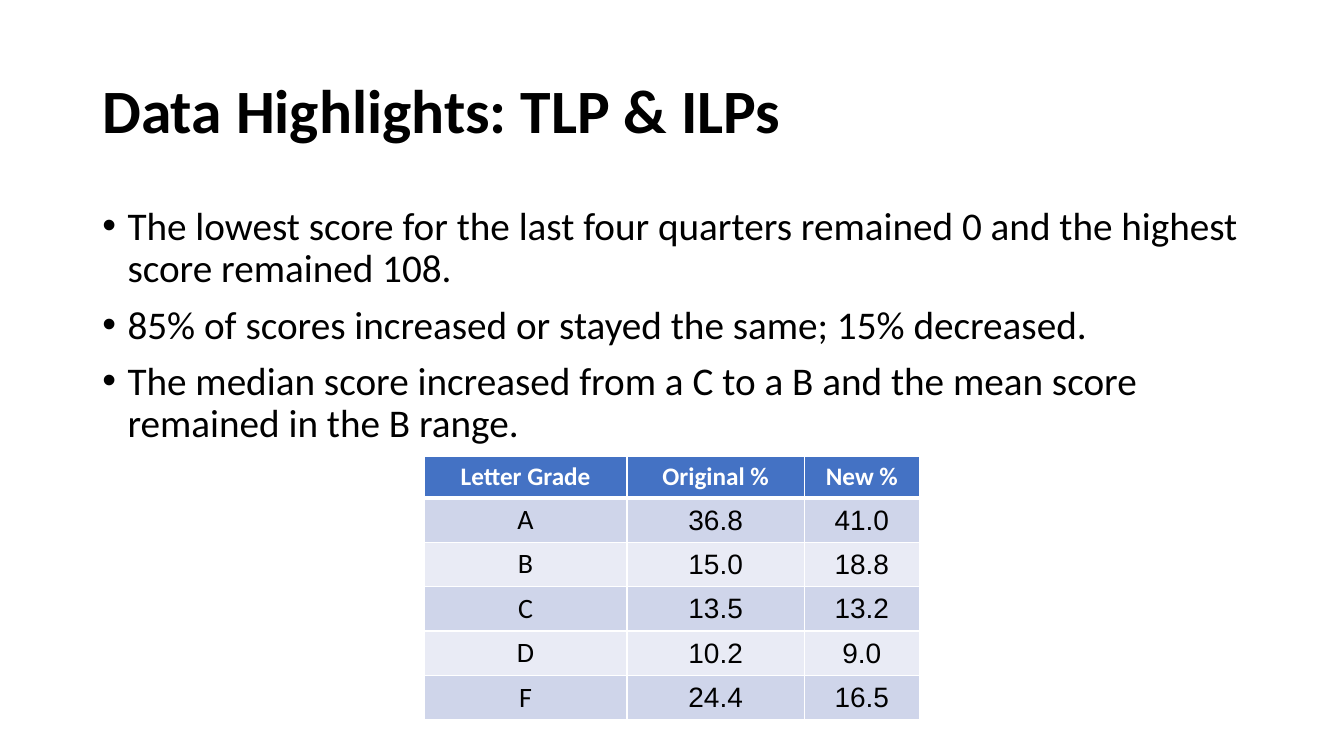
import dataclasses

import lxml.etree
import pptx
import pptx.dml.color
import pptx.enum.text
import pptx.oxml.ns
import pptx.util

Cm = pptx.util.Cm
ALIGN = pptx.enum.text.PP_ALIGN
ANCHOR = pptx.enum.text.MSO_ANCHOR


@dataclasses.dataclass(frozen=True)
class Theme:
    text_font: str = "Calibri"
    number_font: str = "Arial"
    title_size: int = 44
    body_size: int = 28
    header_size: int = 18
    cell_size: int = 20
    black: str = "000000"
    white: str = "FFFFFF"
    header_fill: str = "4472C4"
    band_fills: tuple = ("CFD5EA", "E9EBF5")


def rgb(color):
    return pptx.dml.color.RGBColor.from_string(color)


def add_element(parent, tag, **attributes):
    return lxml.etree.SubElement(parent, pptx.oxml.ns.qn(tag), attributes)


def write_text(paragraph, text, *, font, size, color, bold=False, align=ALIGN.LEFT,
               line_spacing=1.0, space_before=0, bullet=None):
    paragraph.alignment = align
    paragraph.line_spacing = line_spacing
    paragraph.space_before = pptx.util.Pt(space_before)
    if bullet:
        properties = paragraph._p.get_or_add_pPr()
        indent = Cm(0.635)
        properties.set("marL", str(indent))
        properties.set("indent", str(-indent))
        add_element(properties, "a:buFont", typeface="Arial")
        add_element(properties, "a:buChar", char=bullet)
    run = paragraph.add_run()
    run.text = text
    run.font.name = font
    run.font.size = pptx.util.Pt(size)
    run.font.bold = bold
    run.font.color.rgb = rgb(color)


class SlideBuilder:
    def __init__(self, presentation, theme):
        self.theme = theme
        self.slide = presentation.slides.add_slide(presentation.slide_layouts[6])

    def text_box(self, left, top, width, height, anchor):
        shape = self.slide.shapes.add_textbox(Cm(left), Cm(top), Cm(width), Cm(height))
        shape.text_frame.word_wrap = True
        shape.text_frame.vertical_anchor = anchor
        return shape.text_frame

    def title(self, text, *box):
        frame = self.text_box(*box, anchor=ANCHOR.MIDDLE)
        write_text(frame.paragraphs[0], text, font=self.theme.text_font,
                   size=self.theme.title_size, color=self.theme.black,
                   bold=True, line_spacing=0.9)

    def bullets(self, texts, *box):
        frame = self.text_box(*box, anchor=ANCHOR.TOP)
        for index, text in enumerate(texts):
            paragraph = frame.add_paragraph() if index else frame.paragraphs[0]
            write_text(paragraph, text, font=self.theme.text_font,
                       size=self.theme.body_size, color=self.theme.black,
                       line_spacing=0.9, space_before=10 if index else 0, bullet="•")

    def borders(self, cell, row):
        properties = cell._tc.get_or_add_tcPr()
        widths = {"L": 1, "R": 1, "T": 3 if row == 1 else 1, "B": 3 if row == 0 else 1}
        for side, width in widths.items():
            line = add_element(properties, f"a:ln{side}", w=str(pptx.util.Pt(width)))
            fill = add_element(line, "a:solidFill")
            add_element(fill, "a:srgbClr", val=self.theme.white)

    def cell(self, cell, text, row, column):
        theme = self.theme
        header = row == 0
        number = not header and column > 0
        self.borders(cell, row)
        cell.fill.solid()
        cell.fill.fore_color.rgb = rgb(
            theme.header_fill if header else theme.band_fills[(row - 1) % 2])
        if number:
            cell.vertical_anchor = ANCHOR.MIDDLE
            cell.margin_left = cell.margin_right = cell.margin_top = Cm(0.02)
            cell.margin_bottom = 0
        write_text(cell.text_frame.paragraphs[0], text, align=ALIGN.CENTER, bold=header,
                   font=theme.number_font if number else theme.text_font,
                   size=theme.header_size if header else theme.cell_size,
                   color=theme.white if header else theme.black)

    def table(self, rows, left, top, column_widths, header_height, row_height):
        height = header_height + row_height * (len(rows) - 1)
        table = self.slide.shapes.add_table(
            len(rows), len(column_widths), Cm(left), Cm(top),
            Cm(sum(column_widths)), Cm(height)).table
        for column, width in zip(table.columns, column_widths):
            column.width = Cm(width)
        for row, values in enumerate(rows):
            table.rows[row].height = Cm(row_height if row else header_height)
            for column, value in enumerate(values):
                self.cell(table.cell(row, column), value, row, column)


def main():
    presentation = pptx.Presentation()
    presentation.slide_width = Cm(33.87)
    presentation.slide_height = Cm(19.05)
    builder = SlideBuilder(presentation, Theme())
    builder.title("Data Highlights: TLP & ILPs", 2.33, 1.01, 29.21, 3.68)
    builder.bullets([
        "The lowest score for the last four quarters remained 0 and the highest score remained 108.",
        "85% of scores increased or stayed the same; 15% decreased.",
        "The median score increased from a C to a B and the mean score remained in the B range.",
    ], 2.33, 5.08, 29.21, 12.09)
    builder.table([
        ("Letter Grade", "Original %", "New %"),
        ("A", "36.8", "41.0"),
        ("B", "15.0", "18.8"),
        ("C", "13.5", "13.2"),
        ("D", "10.2", "9.0"),
        ("F", "24.4", "16.5"),
    ], left=10.69, top=11.51, column_widths=(5.11, 4.47, 2.9),
        header_height=1.03, row_height=1.12)
    presentation.save("out.pptx")


if __name__ == "__main__":
    main()
